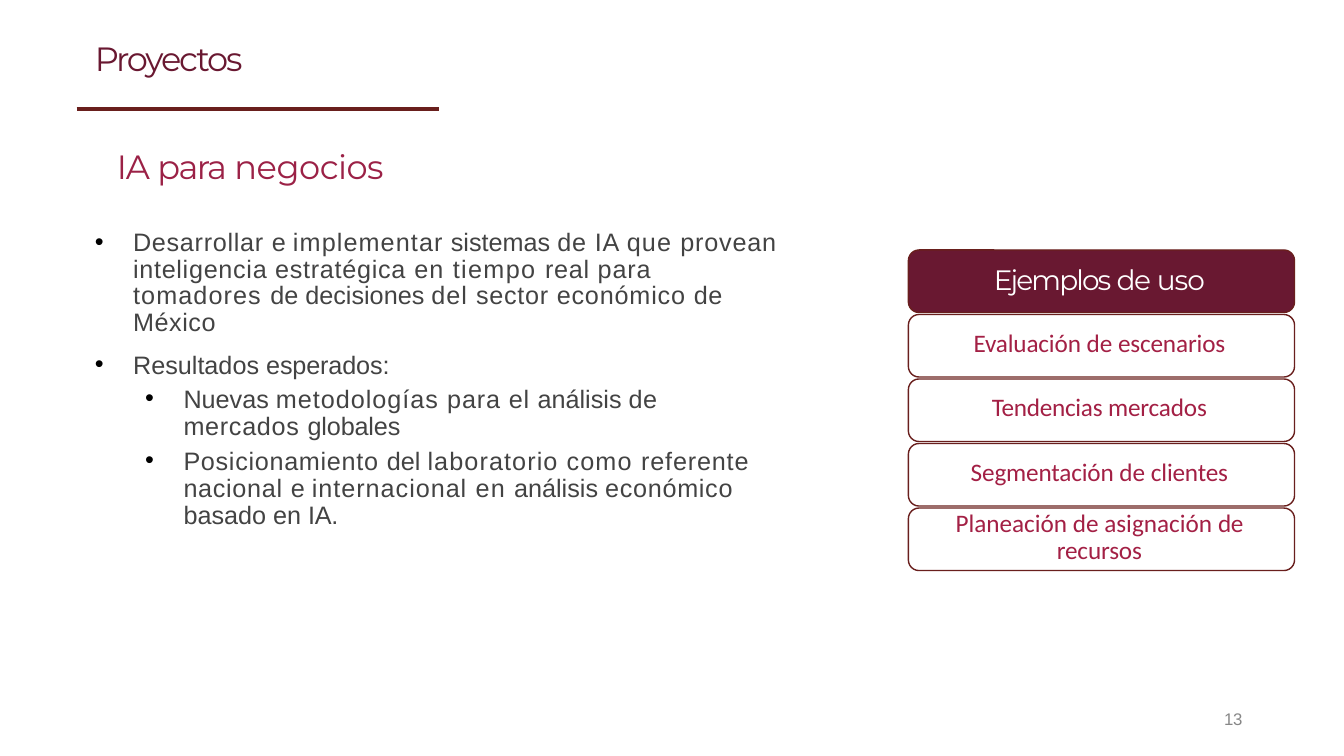
from dataclasses import dataclass

from lxml.etree import SubElement
from pptx import Presentation
from pptx.dml.color import RGBColor
from pptx.enum.shapes import MSO_CONNECTOR, MSO_SHAPE
from pptx.enum.text import MSO_ANCHOR, PP_ALIGN
from pptx.oxml.ns import qn
from pptx.util import Inches, Pt


@dataclass(frozen=True)
class Theme:
    wine: str = "691831"
    border: str = "691F1D"
    heading: str = "9B2146"
    example: str = "A32045"
    body: str = "434343"
    number: str = "878787"
    white: str = "FFFFFF"
    black: str = "000000"
    title_size: int = 24
    card_title_size: int = 20
    body_size: int = 18
    number_size: int = 12
    title_font: str = "Montserrat"
    body_font: str = "Arial"
    card_font: str = "Calibri"


THEME = Theme()
TITLE_STYLE = (THEME.title_font, THEME.title_size, THEME.wine)
HEADING_STYLE = (THEME.title_font, THEME.title_size, THEME.heading)
BODY_STYLE = (THEME.body_font, THEME.body_size, THEME.body)
CARD_TITLE_STYLE = (THEME.title_font, THEME.card_title_size, THEME.white)
EXAMPLE_STYLE = (THEME.card_font, THEME.body_size, THEME.example)
NUMBER_STYLE = (THEME.body_font, THEME.number_size, THEME.number)

# Each run is a text and its letter spacing in points
HEADING = [("IA ", -0.9), ("para ", -1.1), ("negocios", -0.3)]
GOAL = [
    ("Desarrollar ", 0.5), ("e ", 0), ("implementar", 0.8), (" sistemas ", 0),
    ("de IA ", 0.6), ("que ", 0.8), ("provean ", 0.6),
    ("inteligencia estratégica ", 0.5), ("en ", 0.8), ("tiempo ", 1),
    ("real ", 0.5), ("para ", 0.6), ("tomadores ", 0.8), ("de decisiones ", 0),
    ("del ", 0.7), ("sector ", 0.5), ("económico ", 0.6), ("de ", 0.3),
    ("México", 0.4),
]
RESULTS = [("Resultados ", 0), ("esperados:", -0.1)]
METHODS = [
    ("Nuevas ", 0), ("metodologías ", 0.7), ("para ", 0.6), ("el ", 0.5),
    ("análisis ", 0), ("de ", 0.3), ("mercados ", 0.5), ("globales", -0.1),
]
POSITION = [
    ("Posicionamiento ", 0.5), ("del ", 0), ("laboratorio como ", 0.8),
    ("referente ", 0.6), ("nacional ", 0.5), ("e ", 0), ("internacional ", 0.7),
    ("en ", 0.8), ("análisis ", 0), ("económico ", 0.5), ("basado en ", 0),
    ("IA.", -0.2),
]
# Runs, level, space before, line spacing, right margin
BULLETS = [
    (GOAL, 0, 30.8, 0.89, 0.03),
    (RESULTS, 0, 8.4, None, 0),
    (METHODS, 1, 4.8, Pt(19.5), 0.2),
    (POSITION, 1, 5.3, Pt(19.5), 0.2),
]
CARD_TITLE = [("Ejemplos ", -1.4), ("de ", -1.2), ("uso", -0.7)]
EXAMPLES = [
    [("Evaluación ", -0.1), ("de ", 0), ("escenarios", -0.1)],
    [("Tendencias ", -0.2), ("mercados", -0.1)],
    [("Segmentación ", -0.1), ("de ", 0), ("clientes", -0.1)],
    [("Planeación de asignación ", 0), ("de ", -0.2), ("recursos", -0.1)],
]


def color(value):
    return RGBColor.from_string(value)


def add_runs(paragraph, runs, style):
    font_name, size, font_color = style
    for text, spacing in runs:
        run = paragraph.add_run()
        run.text = text
        run.font.name = font_name
        run.font.size = Pt(size)
        run.font.color.rgb = color(font_color)
        run._r.get_or_add_rPr().set("spc", str(round(spacing * 100)))


def add_text(slide, left, top, width, height, runs, style):
    box = slide.shapes.add_textbox(
        Inches(left), Inches(top), Inches(width), Inches(height))
    frame = box.text_frame
    frame.word_wrap = True
    frame.margin_left = frame.margin_right = 0
    frame.margin_top = frame.margin_bottom = 0
    add_runs(frame.paragraphs[0], runs, style)
    return frame


def indent(paragraph, left, hanging=0, right=0):
    properties = paragraph._p.get_or_add_pPr()
    properties.set("marL", str(Inches(left)))
    properties.set("marR", str(Inches(right)))
    properties.set("indent", str(-Inches(hanging)))
    return properties


def add_bullet(frame, runs, level, space_before, line_spacing, right):
    paragraph = frame.add_paragraph()
    left = 0.39 + 0.5 * level
    properties = indent(paragraph, left, 0.38, right)
    bullet_color = SubElement(properties, qn("a:buClr"))
    SubElement(bullet_color, qn("a:srgbClr"), val=THEME.black)
    SubElement(properties, qn("a:buFont"), typeface=THEME.body_font)
    SubElement(properties, qn("a:buChar"), char="•")
    tabs = SubElement(properties, qn("a:tabLst"))
    SubElement(tabs, qn("a:tab"), pos=str(Inches(left)), algn="l")
    paragraph.level = level
    paragraph.space_before = Pt(space_before)
    if line_spacing:
        paragraph.line_spacing = line_spacing
    add_runs(paragraph, runs, BODY_STYLE)


def add_rule(slide, left, right, top):
    rule = slide.shapes.add_connector(
        MSO_CONNECTOR.STRAIGHT,
        Inches(left), Inches(top), Inches(right), Inches(top))
    rule.line.color.rgb = color(THEME.border)
    rule.line.width = Pt(3)
    SubElement(rule._element.spPr, qn("a:effectLst"))


def add_card(slide, top, fill, runs, style):
    card = slide.shapes.add_shape(
        MSO_SHAPE.ROUNDED_RECTANGLE,
        Inches(9.01), Inches(top), Inches(3.83), Inches(0.62))
    card.shadow.inherit = False
    card.adjustments[0] = 0.17
    card.fill.solid()
    card.fill.fore_color.rgb = color(fill)
    card.line.color.rgb = color(THEME.border)
    card.line.width = Pt(1)
    frame = card.text_frame
    frame.word_wrap = True
    frame.vertical_anchor = MSO_ANCHOR.MIDDLE
    frame.margin_left, frame.margin_right = Inches(0.3), Inches(0.34)
    frame.margin_top, frame.margin_bottom = 0, Inches(0.04)
    paragraph = frame.paragraphs[0]
    paragraph.alignment = PP_ALIGN.CENTER
    if style == EXAMPLE_STYLE:
        paragraph.line_spacing = Pt(19.5)
    add_runs(paragraph, runs, style)


def main():
    presentation = Presentation()
    presentation.slide_width = Inches(13.33)
    presentation.slide_height = Inches(7.5)
    slide = presentation.slides.add_slide(presentation.slide_layouts[6])

    # Title and rule
    add_text(slide, 0.94, 0.38, 4.53, 0.41, [("Proyectos", -1.5)], TITLE_STYLE)
    add_rule(slide, 0.76, 4.35, 1.08)

    # Heading and bullets
    frame = add_text(slide, 0.93, 1.45, 6.82, 3.81, HEADING, HEADING_STYLE)
    indent(frame.paragraphs[0], 0.23)
    for bullet in BULLETS:
        add_bullet(frame, *bullet)

    # Stack of examples
    first_top, step = 2.48, 0.64
    add_card(slide, first_top, THEME.wine, CARD_TITLE, CARD_TITLE_STYLE)
    for row, example in enumerate(EXAMPLES, start=1):
        add_card(slide, first_top + row * step, THEME.white,
                 example, EXAMPLE_STYLE)

    # Slide number
    add_text(slide, 12.14, 7.03, 0.24, 0.2, [("13", -0.2)], NUMBER_STYLE)

    presentation.save("out.pptx")


if __name__ == "__main__":
    main()
